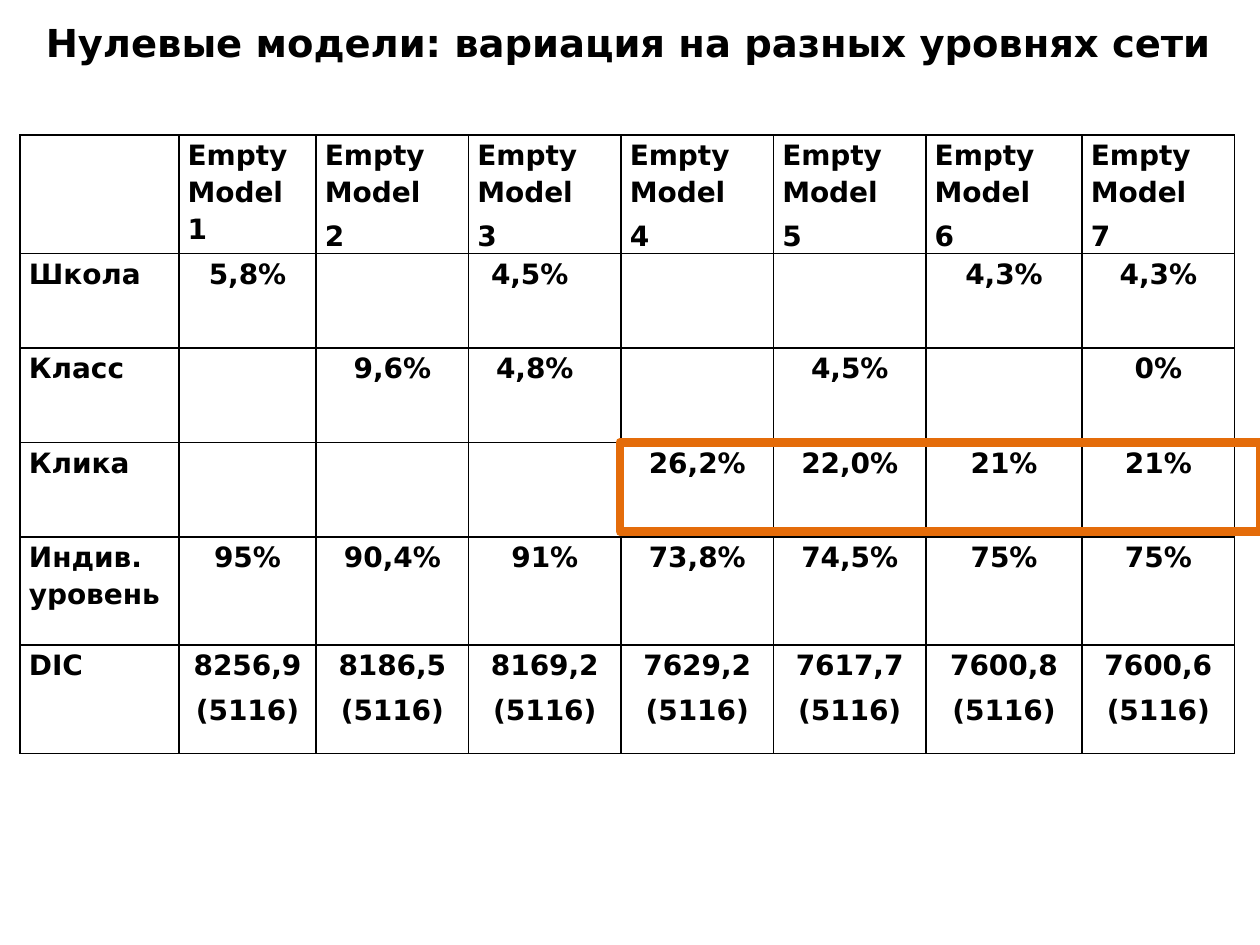
from lxml.etree import SubElement
from pptx import Presentation
from pptx.dml.color import RGBColor
from pptx.enum.shapes import MSO_SHAPE
from pptx.enum.text import MSO_AUTO_SIZE, PP_ALIGN
from pptx.oxml.ns import qn
from pptx.util import Inches, Pt

BLACK = RGBColor(0x00, 0x00, 0x00)
ORANGE = RGBColor(0xE4, 0x6C, 0x0A)
FONT = "DejaVu Sans"

COLUMN_WIDTHS = [1.26, 1.09, 1.21, 1.21, 1.21, 1.21, 1.24, 1.21]
ROW_HEIGHTS = [0.75, 0.75, 0.75, 0.75, 0.86, 0.86]
DIC_VALUES = ["8256,9", "8186,5", "8169,2", "7629,2", "7617,7", "7600,8", "7600,6"]
ROWS = [
    ["", "Empty Model 1"] + [f"Empty Model\n{number}" for number in range(2, 8)],
    ["Школа", "5,8%", "", "4,5%", "", "", "4,3%", "4,3%"],
    ["Класс", "", "9,6%", "4,8%", "", "4,5%", "", "0%"],
    ["Клика", "", "", "", "26,2%", "22,0%", "21%", "21%"],
    ["Индив. уровень", "95%", "90,4%", "91%", "73,8%", "74,5%", "75%", "75%"],
    ["DIC"] + [f"{value}\n(5116)" for value in DIC_VALUES],
]
EXTRA_RIGHT_MARGINS = {(1, 3): 0.24, (2, 3): 0.16}


def format_paragraph(paragraph, size, alignment):
    paragraph.alignment = alignment
    for run in paragraph.runs:
        run.font.name = FONT
        run.font.size = Pt(size)
        run.font.bold = True
        run.font.color.rgb = BLACK


def add_title(slide, left, top, width, height):
    shape = slide.shapes.add_textbox(Inches(left), Inches(top), Inches(width), Inches(height))
    text_frame = shape.text_frame
    text_frame.word_wrap = True
    text_frame.auto_size = MSO_AUTO_SIZE.SHAPE_TO_FIT_TEXT
    text_frame.text = "Нулевые модели: вариация на разных уровнях сети"
    format_paragraph(text_frame.paragraphs[0], 22, PP_ALIGN.CENTER)


def set_borders(cell):
    properties = cell._tc.get_or_add_tcPr()
    for position, side in enumerate(("a:lnL", "a:lnR", "a:lnT", "a:lnB")):
        line = SubElement(properties, qn(side), w=str(Pt(1)))
        fill = SubElement(line, qn("a:solidFill"))
        SubElement(fill, qn("a:srgbClr"), val=str(BLACK))
        properties.insert(position, line)


def fill_cell(cell, text, alignment, extra_margin):
    cell.fill.background()
    set_borders(cell)
    cell.margin_left = Inches(0.07)
    cell.margin_right = Inches(0.07 + extra_margin)
    cell.margin_top = cell.margin_bottom = 0
    cell.text_frame.text = text
    for paragraph in cell.text_frame.paragraphs:
        paragraph.line_spacing = 1.15
        paragraph.space_before = paragraph.space_after = Pt(2)
        format_paragraph(paragraph, 16, alignment)


def add_model_table(slide, left, top, width, height):
    frame = slide.shapes.add_table(
        len(ROWS), len(COLUMN_WIDTHS), Inches(left), Inches(top), Inches(width), Inches(height)
    )
    table = frame.table
    table.first_row = table.horz_banding = False
    for column, column_width in zip(table.columns, COLUMN_WIDTHS):
        column.width = Inches(column_width)
    for row, row_height in zip(table.rows, ROW_HEIGHTS):
        row.height = Inches(row_height)
    for row_index, texts in enumerate(ROWS):
        for column_index, text in enumerate(texts):
            is_heading = row_index == 0 or column_index == 0
            alignment = PP_ALIGN.LEFT if is_heading else PP_ALIGN.CENTER
            extra_margin = EXTRA_RIGHT_MARGINS.get((row_index, column_index), 0)
            fill_cell(table.cell(row_index, column_index), text, alignment, extra_margin)


def add_highlight(slide, left, top, width, height):
    shape = slide.shapes.add_shape(
        MSO_SHAPE.RECTANGLE, Inches(left), Inches(top), Inches(width), Inches(height)
    )
    shape.shadow.inherit = False
    shape.fill.background()
    shape.line.color.rgb = ORANGE
    shape.line.width = Pt(5)


def main():
    presentation = Presentation()
    presentation.slide_width = Inches(10)
    presentation.slide_height = Inches(7.5)
    slide = presentation.slides.add_slide(presentation.slide_layouts[6])
    add_model_table(slide, 0.16, 1.07, 9.65, 4.95)
    add_title(slide, 0.18, 0.1, 9.61, 0.47)
    add_highlight(slide, 4.92, 3.51, 5.08, 0.71)
    presentation.save("out.pptx")


if __name__ == "__main__":
    main()
